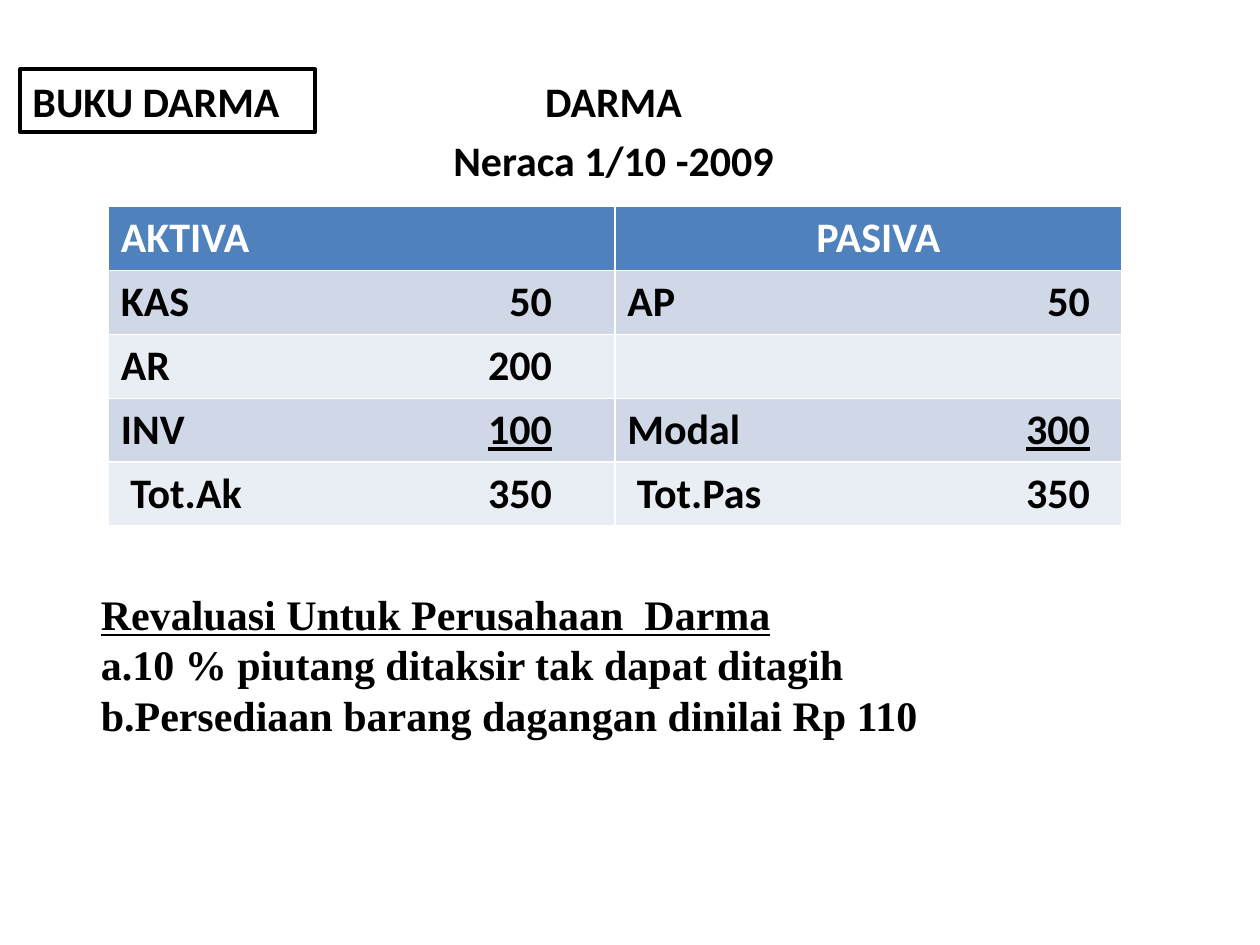
from lxml.etree import SubElement
from pptx import Presentation
from pptx.dml.color import RGBColor
from pptx.enum.shapes import MSO_SHAPE
from pptx.enum.text import MSO_ANCHOR, MSO_AUTO_SIZE, PP_ALIGN
from pptx.oxml.ns import qn
from pptx.util import Inches, Pt

COLORS = {
    "ink": "000000",
    "paper": "FFFFFF",
    "header": "4F81BD",
    "odd": "D0D8E8",
    "even": "E9EDF4",
}
ROW_HEIGHT = 0.505
COLUMN_WIDTH = 4.02
AMOUNT_STOPS = (3.42, 3.67)
PASIVA_INDENT = 1.5
ACCOUNTS = [
    (("KAS", "50"), ("AP", "50")),
    (("AR", "200"), None),
    (("INV", "100"), ("Modal", "300")),
    ((" Tot.Ak", "350"), (" Tot.Pas", "350")),
]
SUMMED_ROW = 3
REVALUATION = [
    "Revaluasi Untuk Perusahaan  Darma",
    "a.10 % piutang ditaksir tak dapat ditagih",
    "b.Persediaan barang dagangan dinilai Rp 110",
]


def rgb(name):
    return RGBColor.from_string(COLORS[name])


def add_run(paragraph, text, color="ink", font="Calibri", underline=False):
    run = paragraph.add_run()
    run.text = text
    run.font.name = font
    run.font.size = Pt(24)
    run.font.bold = True
    run.font.underline = underline
    run.font.color.rgb = rgb(color)


def place(shape, left, top, width, height):
    shape.left, shape.top = Inches(left), Inches(top)
    shape.width, shape.height = Inches(width), Inches(height)


def fill_placeholder(placeholder, area, lines, font, align, gap, underlined=()):
    place(placeholder, *area)
    frame = placeholder.text_frame
    frame.auto_size = MSO_AUTO_SIZE.NONE
    frame.vertical_anchor = MSO_ANCHOR.TOP
    for index, line in enumerate(lines):
        paragraph = frame.add_paragraph() if index else frame.paragraphs[0]
        paragraph.alignment = align
        paragraph.space_before = Pt(gap if index else 0)
        properties = paragraph._p.get_or_add_pPr()
        properties.set("marL", "0")
        properties.set("indent", "0")
        SubElement(properties, qn("a:buNone"))
        add_run(paragraph, line, font=font, underline=index in underlined)


def add_book_label(slide, text):
    label = slide.shapes.add_shape(MSO_SHAPE.RECTANGLE, 0, 0, 0, 0)
    place(label, 0.16, 0.55, 2.34, 0.5)
    label.shadow.inherit = False
    label.fill.background()
    label.line.color.rgb = rgb("ink")
    label.line.width = Pt(2.25)
    label.text_frame.vertical_anchor = MSO_ANCHOR.TOP
    paragraph = label.text_frame.paragraphs[0]
    paragraph.alignment = PP_ALIGN.LEFT
    add_run(paragraph, text)


def write_account(paragraph, account, stop, underline):
    name, amount = account
    tabs = SubElement(paragraph._p.get_or_add_pPr(), qn("a:tabLst"))
    SubElement(tabs, qn("a:tab"), pos=str(Inches(stop)), algn="r")
    add_run(paragraph, name + "\t")
    add_run(paragraph, amount, underline=underline)


def add_balance_sheet(slide):
    row_count = len(ACCOUNTS) + 1
    sheet = slide.shapes.add_table(
        row_count, 2, Inches(0.86), Inches(1.64),
        Inches(2 * COLUMN_WIDTH), Inches(row_count * ROW_HEIGHT),
    ).table
    for side, heading in enumerate(("AKTIVA", "PASIVA")):
        cell = sheet.cell(0, side)
        cell.fill.solid()
        cell.fill.fore_color.rgb = rgb("header")
        paragraph = cell.text_frame.paragraphs[0]
        paragraph._p.get_or_add_pPr().set("marL", str(Inches(side * PASIVA_INDENT)))
        add_run(paragraph, heading, "paper")
    for row, accounts in enumerate(ACCOUNTS, 1):
        for side, account in enumerate(accounts):
            cell = sheet.cell(row, side)
            cell.fill.solid()
            cell.fill.fore_color.rgb = rgb("odd" if row % 2 else "even")
            if account:
                write_account(cell.text_frame.paragraphs[0], account,
                              AMOUNT_STOPS[side], row == SUMMED_ROW)


def main():
    deck = Presentation()
    deck.slide_width, deck.slide_height = Inches(10), Inches(7.5)
    slide = deck.slides.add_slide(deck.slide_layouts[1])
    fill_placeholder(slide.shapes.title, (2.66, 0.55, 4.42, 1.02),
                     ["DARMA", "Neraca 1/10 -2009"], "Calibri", PP_ALIGN.CENTER, 4.8)
    fill_placeholder(slide.placeholders[1], (0.7, 4.62, 6.8, 1.31),
                     REVALUATION, "Times New Roman", PP_ALIGN.LEFT, 0, underlined=(0,))
    add_balance_sheet(slide)
    add_book_label(slide, "BUKU DARMA")
    deck.save("out.pptx")


if __name__ == "__main__":
    main()
